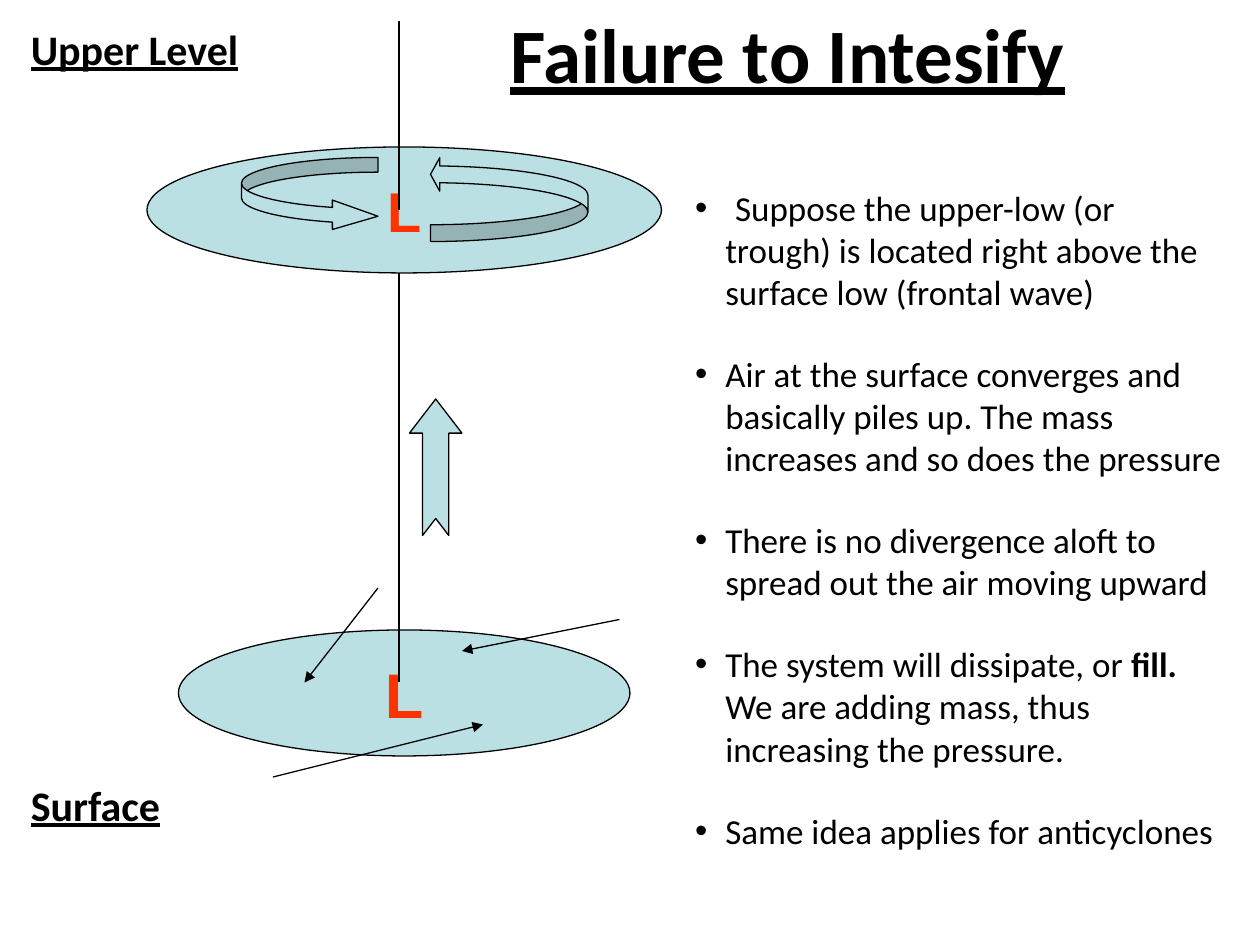
from typing import NamedTuple

from lxml import etree
from pptx import Presentation
from pptx import util as u
from pptx.dml.color import RGBColor
from pptx.enum import shapes, text
from pptx.oxml.ns import qn

EMU_PER_PX = 9525
COLORS = {"ink": "000000", "air": "BBE0E3", "low": "FF3300"}
LINE_WIDTH = u.Pt(0.75)
BULLET_INDENT = 23


class Frame(NamedTuple):
    left: int
    top: int
    width: int
    height: int


class Low(NamedTuple):
    frame: Frame
    letter_size: int


class BlockArrow(NamedTuple):
    kind: shapes.MSO_SHAPE
    frame: Frame
    rotation: int
    adjustments: tuple[float, ...]


class Stroke(NamedTuple):
    start: tuple[int, int]
    end: tuple[int, int]
    arrow: bool


class Span(NamedTuple):
    words: str
    font: str = "Calibri"
    bold: bool = False


LOWS = [
    Low(Frame(136, 480, 344, 96), 36),
    Low(Frame(112, 112, 392, 96), 32),
]
STROKES = [
    Stroke((304, 16), (304, 160), False),
    Stroke((304, 208), (304, 520), False),
    Stroke((208, 592), (368, 552), True),
    Stroke((472, 472), (352, 496), True),
    Stroke((288, 448), (232, 520), True),
]
CURVED = shapes.MSO_SHAPE.CURVED_RIGHT_ARROW
NOTCHED = shapes.MSO_SHAPE.NOTCHED_RIGHT_ARROW
BLOCK_ARROWS = [
    BlockArrow(CURVED, Frame(184, 120, 104, 56), 0, (0.2, 0.4, 0.62)),
    BlockArrow(CURVED, Frame(328, 120, 120, 64), 180, (0.2, 0.4, 0.11)),
    BlockArrow(NOTCHED, Frame(280, 336, 104, 40), 270, (0.5, 0.65)),
]
LABELS = {
    "Upper Level": Frame(14, 13, 180, 48),
    "Surface": Frame(14, 589, 119, 48),
}
POINTS = [
    [
        Span(" ", font="Arial"),
        Span("Suppose the upper-low (or trough) is located right above the "
             "surface low (frontal wave)"),
    ],
    [Span("Air at the surface converges and basically piles up. The mass "
          "increases and so does the pressure")],
    [Span("There is no divergence aloft to spread out the air moving upward")],
    [
        Span("The system will dissipate, or "),
        Span("fill. ", bold=True),
        Span("We are adding mass, thus increasing the pressure."),
    ],
    [Span("Same idea applies for anticyclones")],
]


def px(length: int) -> u.Emu:
    return u.Emu(length * EMU_PER_PX)


def color(name: str) -> RGBColor:
    return RGBColor.from_string(COLORS[name])


def place(shape, frame: Frame) -> None:
    shape.left, shape.top, shape.width, shape.height = map(px, frame)


def set_font(font, name: str, size: int, tint: str, bold: bool = False,
             underline: bool = False) -> None:
    font.name, font.size = name, u.Pt(size)
    font.color.rgb = color(tint)
    font.bold, font.underline = bold, underline


def add_outlined(page, kind: shapes.MSO_SHAPE, frame: Frame):
    shape = page.shapes.add_shape(kind, *map(px, frame))
    shape.shadow.inherit = False
    shape.fill.solid()
    shape.fill.fore_color.rgb = color("air")
    shape.line.color.rgb = color("ink")
    shape.line.width = LINE_WIDTH
    return shape


def add_low(page, low: Low) -> None:
    frame = add_outlined(page, shapes.MSO_SHAPE.OVAL, low.frame).text_frame
    frame.word_wrap = False
    frame.vertical_anchor = text.MSO_ANCHOR.MIDDLE
    para = frame.paragraphs[0]
    para.text = "L"
    para.alignment = text.PP_ALIGN.CENTER
    set_font(para.font, "Arial", low.letter_size, "low", bold=True)


def add_block_arrow(page, arrow: BlockArrow) -> None:
    shape = add_outlined(page, arrow.kind, arrow.frame)
    shape.rotation = arrow.rotation
    for index, value in enumerate(arrow.adjustments):
        shape.adjustments[index] = value


def add_stroke(page, stroke: Stroke) -> None:
    line = page.shapes.add_connector(
        shapes.MSO_CONNECTOR.STRAIGHT, *map(px, stroke.start + stroke.end))
    line.line.color.rgb = color("ink")
    line.line.width = LINE_WIDTH
    if stroke.arrow:
        etree.SubElement(line.line._get_or_add_ln(), qn("a:tailEnd"),
                         type="triangle")
    etree.SubElement(line._element.spPr, qn("a:effectLst"))


def add_label(page, words: str, frame: Frame) -> None:
    box = page.shapes.add_textbox(*map(px, frame))
    box.text_frame.word_wrap = False
    box.text_frame.auto_size = text.MSO_AUTO_SIZE.SHAPE_TO_FIT_TEXT
    para = box.text_frame.paragraphs[0]
    para.text = words
    set_font(para.font, "Calibri", 24, "ink", bold=True, underline=True)


def fill_title(title) -> None:
    place(title, Frame(168, 0, 864, 120))
    title.text_frame.vertical_anchor = text.MSO_ANCHOR.TOP
    para = title.text_frame.paragraphs[0]
    para.text = "Failure to Intesify"
    para.alignment = text.PP_ALIGN.CENTER
    set_font(para.font, "Calibri", 44, "ink", bold=True, underline=True)


def fill_points(body) -> None:
    place(body, Frame(520, 137, 422, 527))
    frame = body.text_frame
    frame.auto_size = text.MSO_AUTO_SIZE.NONE
    for index, spans in enumerate(POINTS):
        para = frame.add_paragraph() if index else frame.paragraphs[0]
        para.space_before, para.space_after = u.Pt(0), u.Pt(23)
        properties = para._p.get_or_add_pPr()
        properties.set("marL", str(px(BULLET_INDENT)))
        properties.set("indent", str(px(-BULLET_INDENT)))
        for span in spans:
            run = para.add_run()
            run.text = span.words
            set_font(run.font, span.font, 20, "ink", span.bold)


def main() -> None:
    deck = Presentation()
    deck.slide_width, deck.slide_height = px(960), px(720)
    page = deck.slides.add_slide(deck.slide_layouts[1])
    fill_title(page.shapes.title)
    fill_points(page.placeholders[1])
    for low in LOWS:
        add_low(page, low)
    for stroke in STROKES:
        add_stroke(page, stroke)
    for arrow in BLOCK_ARROWS:
        add_block_arrow(page, arrow)
    for words, frame in LABELS.items():
        add_label(page, words, frame)
    deck.save("out.pptx")


if __name__ == "__main__":
    main()
